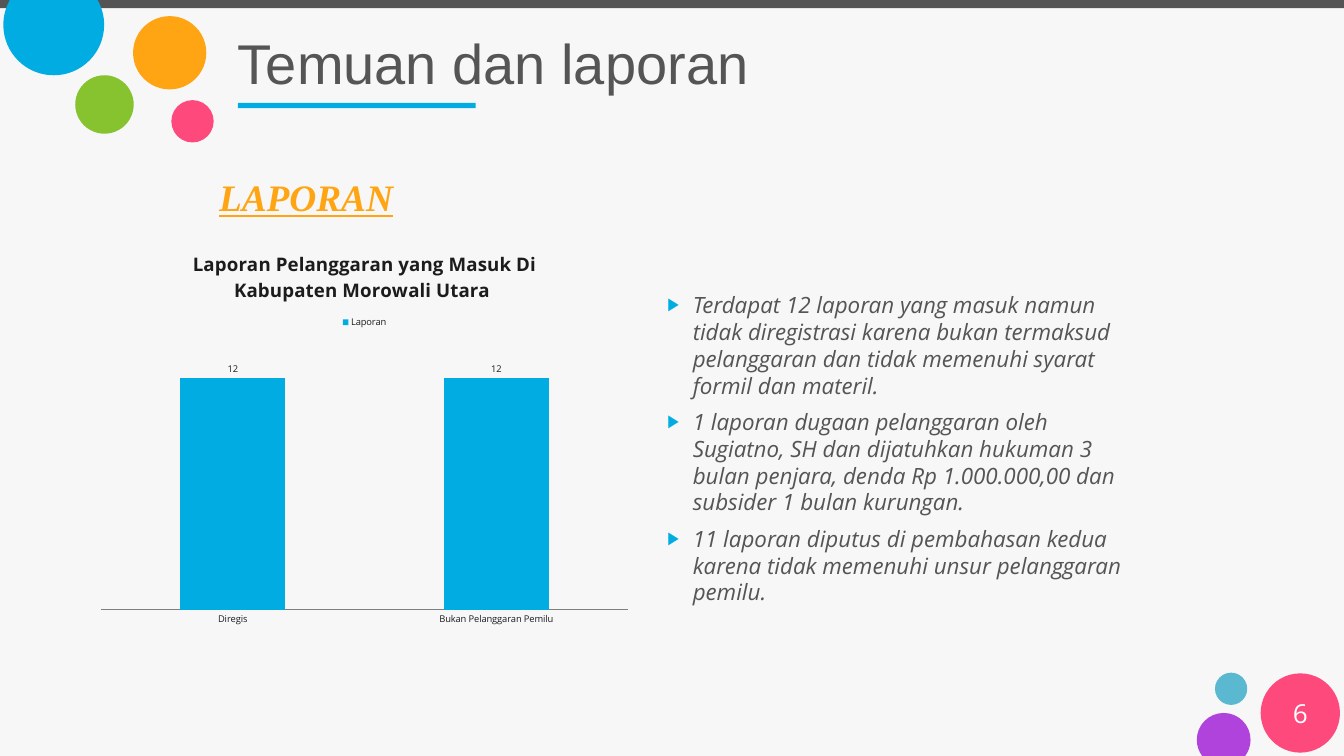
import math
from dataclasses import dataclass
from itertools import pairwise

from lxml import etree
from pptx import Presentation
from pptx import util as u
from pptx.chart.data import CategoryChartData
from pptx.dml.color import RGBColor
from pptx.enum import chart as charts, shapes, text
from pptx.oxml.ns import qn

PX = 9144  # 100 px to the inch
WIDTH, HEIGHT = 2000, 1125


@dataclass(frozen=True)
class Theme:
    background: str = "F7F7F7"
    bar: str = "545454"
    ink: str = "555555"
    chart_ink: str = "1C1C1C"
    axis: str = "808080"
    white: str = "FFFFFF"
    blue: str = "00ACE2"
    orange: str = "FFA513"
    green: str = "87C32F"
    pink: str = "FD497C"
    teal: str = "5BB8D1"
    purple: str = "B143DD"
    body_font: str = "Open Sans"
    title_font: str = "Arial"
    heading_font: str = "Times New Roman"
    title_size: int = 60
    heading_size: int = 40
    number_size: int = 28
    body_size: int = 24
    chart_title_size: int = 20
    chart_size: int = 10


def rgb(value):
    return RGBColor.from_string(value)


def px(*lengths):
    return [length * PX for length in lengths]


def style_font(font, name, size, color, bold=False, italic=False, underline=False):
    font.name, font.size = name, u.Pt(size)
    font.color.rgb = rgb(color)
    font.bold, font.italic, font.underline = bold, italic, underline


def add_bullet(paragraph, color, font, indent=38):
    properties = paragraph._p.get_or_add_pPr()
    properties.set("marL", str(indent * PX))
    properties.set("indent", str(-indent * PX))
    bullet_color = etree.SubElement(properties, qn("a:buClr"))
    etree.SubElement(bullet_color, qn("a:srgbClr"), val=color)
    etree.SubElement(properties, qn("a:buSzPct"), val="80000")
    etree.SubElement(properties, qn("a:buFont"), typeface=font)
    etree.SubElement(properties, qn("a:buChar"), char="▶")


class SlideBuilder:
    def __init__(self, slide, theme):
        self.slide, self.theme = slide, theme
        fill = slide.background.fill
        fill.solid()
        fill.fore_color.rgb = rgb(theme.background)

    def paint(self, shape, color):
        shape.shadow.inherit = False
        shape.fill.solid()
        shape.fill.fore_color.rgb = rgb(color)
        shape.line.fill.background()

    def rectangle(self, box, color):
        shape = self.slide.shapes.add_shape(shapes.MSO_SHAPE.RECTANGLE, *px(*box))
        self.paint(shape, color)

    def circle(self, left, top, diameter, color):
        shape = self.slide.shapes.add_shape(
            shapes.MSO_SHAPE.OVAL, *px(left, top, diameter, diameter))
        self.paint(shape, color)

    def cropped_circle(self, center_x, center_y, radius, edge, color):
        """Draw a circle cut off by the horizontal slide edge at y = edge."""
        side = 1 if edge < center_y else -1
        cut = math.asin(abs(center_y - edge) / radius)
        angles = (-cut, 0, math.pi / 2, math.pi, math.pi + cut)

        def point(angle, pull=0.0):
            """Point on the circle, moved along its tangent by pull radii."""
            x = math.cos(angle) - pull * math.sin(angle)
            y = math.sin(angle) + pull * math.cos(angle)
            return (round((center_x + radius * x) * PX),
                    round((center_y + side * radius * y) * PX))

        outline = self.slide.shapes.build_freeform(*point(angles[-1]))
        outline.add_line_segments([point(angle) for angle in angles], close=True)
        shape = outline.convert_to_shape()
        arcs = list(shape._element.iter(qn("a:lnTo")))[1:]
        for line, (start, end) in zip(arcs, pairwise(angles)):
            pull = 4 / 3 * math.tan((end - start) / 4)
            curve = etree.Element(qn("a:cubicBezTo"))
            for x, y in (point(start, pull), point(end, -pull), point(end)):
                etree.SubElement(curve, qn("a:pt"),
                                 x=str(x - shape.left), y=str(y - shape.top))
            line.getparent().replace(line, curve)
        self.paint(shape, color)

    def text(self, box, *paragraphs, anchor=text.MSO_ANCHOR.TOP,
             align=text.PP_ALIGN.LEFT, spacing=1.0, before=0, bullet=None, **font):
        frame = self.slide.shapes.add_textbox(*px(*box)).text_frame
        frame.word_wrap = True
        frame.vertical_anchor = anchor
        frame.margin_left = frame.margin_right = 18 * PX
        frame.margin_top = frame.margin_bottom = 9 * PX
        for index, content in enumerate(paragraphs):
            paragraph = frame.add_paragraph() if index else frame.paragraphs[0]
            paragraph.alignment = align
            paragraph.line_spacing = spacing
            paragraph.space_before = u.Pt(before)
            if bullet:
                add_bullet(paragraph, bullet, self.theme.title_font)
            run = paragraph.add_run()
            run.text = content
            style_font(run.font, **font)

    def column_chart(self, box, title, categories, name, values, maximum):
        theme = self.theme
        data = CategoryChartData()
        data.categories = categories
        data.add_series(name, values)
        chart = self.slide.shapes.add_chart(
            charts.XL_CHART_TYPE.COLUMN_CLUSTERED, *px(*box), data).chart
        style_font(chart.font, theme.body_font, theme.chart_size, theme.chart_ink)

        chart.has_title = True
        chart.chart_title.include_in_layout = False
        run = chart.chart_title.text_frame.paragraphs[0].add_run()
        run.text = title
        style_font(run.font, theme.body_font, theme.chart_title_size,
                   theme.chart_ink, bold=True)

        chart.has_legend = True
        chart.legend.position = charts.XL_LEGEND_POSITION.TOP
        chart.legend.include_in_layout = False

        chart.value_axis.visible = False
        chart.value_axis.has_major_gridlines = False
        chart.value_axis.minimum_scale = 0
        chart.value_axis.maximum_scale = maximum
        chart.category_axis.major_tick_mark = charts.XL_TICK_MARK.NONE
        chart.category_axis.format.line.color.rgb = rgb(theme.axis)

        plot = chart.plots[0]
        plot.vary_by_categories = False
        plot.gap_width, plot.overlap = 150, -25
        plot.has_data_labels = True
        plot.data_labels.show_value = True
        plot.data_labels.position = charts.XL_LABEL_POSITION.OUTSIDE_END
        fill = plot.series[0].format.fill
        fill.solid()
        fill.fore_color.rgb = rgb(theme.blue)


def main():
    presentation = Presentation()
    presentation.slide_width, presentation.slide_height = px(WIDTH, HEIGHT)
    theme = Theme()
    slide = SlideBuilder(
        presentation.slides.add_slide(presentation.slide_layouts[6]), theme)

    slide.rectangle((0, 0, WIDTH, 12), theme.bar)
    slide.circle(255, 149, 63, theme.pink)
    slide.cropped_circle(80, 37, 75, 0, theme.blue)
    slide.circle(112, 112, 87, theme.green)
    slide.circle(198, 24, 109, theme.orange)
    slide.circle(1808, 1001, 48, theme.teal)
    slide.circle(1876, 1002, 118, theme.pink)
    slide.cropped_circle(1821, 1101, 40, HEIGHT, theme.purple)
    slide.rectangle((354, 153, 354, 8), theme.blue)

    slide.text((336, 27, 1569, 132), "Temuan dan laporan",
               anchor=text.MSO_ANCHOR.MIDDLE, name=theme.title_font,
               size=theme.title_size, color=theme.ink)
    slide.text((1876, 1031, 118, 60), "6", anchor=text.MSO_ANCHOR.MIDDLE,
               align=text.PP_ALIGN.CENTER, name=theme.body_font,
               size=theme.number_size, color=theme.white)
    slide.text((308, 237, 458, 55), "LAPORAN", spacing=1.2, before=12,
               name=theme.heading_font, size=theme.heading_size,
               color=theme.orange, bold=True, italic=True, underline=True)
    slide.text(
        (975, 424, 747, 518),
        "Terdapat 12 laporan yang masuk namun tidak diregistrasi karena bukan "
        "termaksud pelanggaran dan tidak memenuhi syarat formil dan materil.",
        "1 laporan dugaan pelanggaran oleh Sugiatno, SH dan dijatuhkan hukuman 3 "
        "bulan penjara, denda Rp 1.000.000,00 dan subsider 1 bulan kurungan.",
        "11 laporan diputus di pembahasan kedua karena tidak memenuhi unsur "
        "pelanggaran pemilu.",
        before=10, bullet=theme.blue, name=theme.body_font,
        size=theme.body_size, color=theme.ink, italic=True)
    slide.column_chart(
        (134, 348, 817, 594),
        "Laporan Pelanggaran yang Masuk Di Kabupaten Morowali Utara ",
        ("Diregis", "Bukan Pelanggaran Pemilu"), "Laporan", (12, 12), maximum=14)

    presentation.save("out.pptx")


if __name__ == "__main__":
    main()
